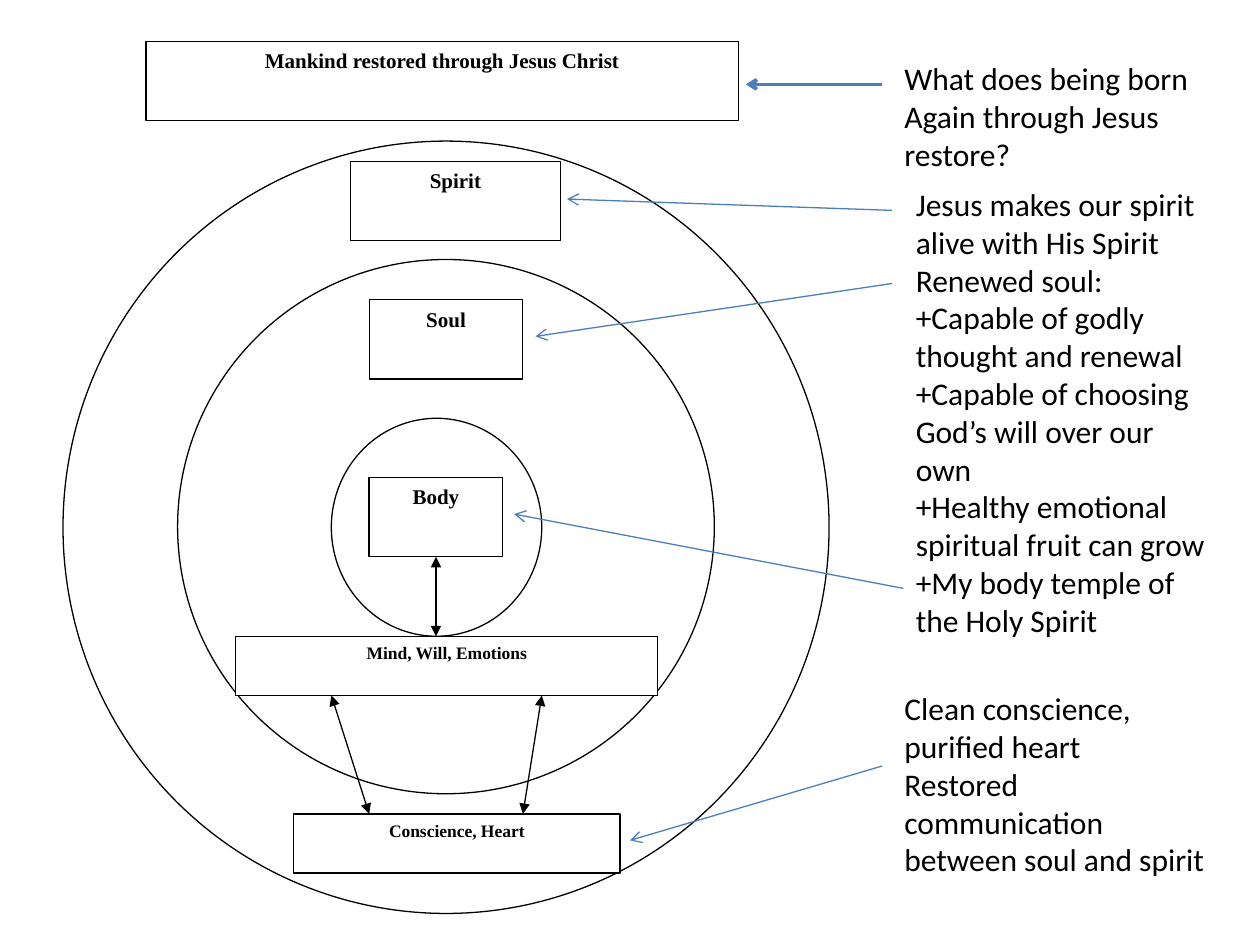
from lxml.etree import SubElement
from pptx import Presentation
from pptx.dml.color import RGBColor
from pptx.enum.shapes import MSO_CONNECTOR, MSO_SHAPE
from pptx.enum.text import MSO_ANCHOR, PP_ALIGN
from pptx.oxml.ns import qn
from pptx.util import Inches, Pt

BLACK = RGBColor(0x00, 0x00, 0x00)
WHITE = RGBColor(0xFF, 0xFF, 0xFF)
BLUE = RGBColor(0x4B, 0x7E, 0xBC)

CIRCLES = [
    (0.5, 1.12, 6.08, 6.13),
    (1.41, 2.06, 4.26, 4.24),
    (2.63, 3.32, 1.67, 1.73),
]
LABELS = [
    ("Spirit", 12, (2.78, 1.28, 1.67, 0.63)),
    ("Soul", 12, (2.93, 2.38, 1.22, 0.63)),
    ("Body", 12, (2.93, 3.79, 1.06, 0.63)),
    ("Mankind restored through Jesus Christ", 12, (1.16, 0.33, 4.7, 0.63)),
    ("Mind, Will, Emotions", 10, (1.87, 5.05, 3.35, 0.47)),
    ("Conscience, Heart", 10, (2.33, 6.46, 2.59, 0.47)),
]
LINKS = [
    ((3.46, 4.42), (3.46, 5.05)),
    ((2.93, 6.46), (2.63, 5.52)),
    ((4.15, 6.46), (4.3, 5.52)),
]
POINTERS = [
    ((7, 0.67), (5.92, 0.67), 2),
    ((7.08, 1.67), (4.5, 1.58), 0.75),
    ((7.08, 2.25), (4.25, 2.67), 0.75),
    ((7.17, 4.67), (4.08, 4.08), 0.75),
    ((7, 6.08), (5, 6.67), 0.75),
]
QUESTION = ["What does being born", "Again through Jesus", "restore?"]
RENEWAL = [
    "Jesus makes our spirit",
    "alive with His Spirit",
    "Renewed soul:",
    "+Capable of godly thought and renewal",
    "+Capable of choosing God’s will over our own",
    "+Healthy emotional spiritual fruit can grow",
    "+My body temple of the Holy Spirit",
]
CONSCIENCE = [
    "Clean conscience, purified heart",
    "Restored communication",
    "between soul and spirit",
]


def add_run(paragraph, text, font_name, size, bold=False):
    run = paragraph.add_run()
    run.text = text
    run.font.name = font_name
    run.font.size = Pt(size)
    run.font.bold = bold
    run.font.color.rgb = BLACK


def add_outlined_shape(slide, kind, box):
    shape = slide.shapes.add_shape(kind, *map(Inches, box))
    shape.shadow.inherit = False
    shape.fill.solid()
    shape.fill.fore_color.rgb = WHITE
    shape.line.color.rgb = BLACK
    shape.line.width = Pt(0.75)
    return shape


def add_label(slide, text, size, box):
    shape = add_outlined_shape(slide, MSO_SHAPE.RECTANGLE, box)
    frame = shape.text_frame
    frame.word_wrap = True
    frame.vertical_anchor = MSO_ANCHOR.TOP
    paragraph = frame.paragraphs[0]
    paragraph.alignment = PP_ALIGN.CENTER
    add_run(paragraph, text, "Times New Roman", size, bold=True)


def add_arrow(slide, start, end, color, width, head=None, tail=None):
    connector = slide.shapes.add_connector(
        MSO_CONNECTOR.STRAIGHT, *map(Inches, start + end)
    )
    connector.line.color.rgb = color
    connector.line.width = Pt(width)
    line = connector.line._get_or_add_ln()
    for tag, arrowhead in (("a:headEnd", head), ("a:tailEnd", tail)):
        if arrowhead:
            SubElement(line, qn(tag), type=arrowhead)
    SubElement(connector._element.spPr, qn("a:effectLst"))


def add_note(slide, lines, box, wrap=True):
    frame = slide.shapes.add_textbox(*map(Inches, box)).text_frame
    frame.word_wrap = wrap
    for index, text in enumerate(lines):
        paragraph = frame.add_paragraph() if index else frame.paragraphs[0]
        add_run(paragraph, text, "Calibri", 18)


def main():
    presentation = Presentation()
    presentation.slide_width = Inches(10)
    presentation.slide_height = Inches(7.5)
    slide = presentation.slides.add_slide(presentation.slide_layouts[6])

    for box in CIRCLES:
        add_outlined_shape(slide, MSO_SHAPE.OVAL, box)
    for text, size, box in LABELS:
        add_label(slide, text, size, box)
    for start, end in LINKS:
        add_arrow(slide, start, end, BLACK, 0.75, "triangle", "triangle")

    add_note(slide, QUESTION, (7.08, 0.42, 2.54, 1.01), wrap=False)
    add_note(slide, RENEWAL, (7.17, 1.42, 2.5, 3.74))
    add_note(slide, CONSCIENCE, (7.08, 5.42, 2.67, 1.62))
    for start, end, width in POINTERS:
        add_arrow(slide, start, end, BLUE, width, tail="arrow")

    presentation.save("out.pptx")


if __name__ == "__main__":
    main()
